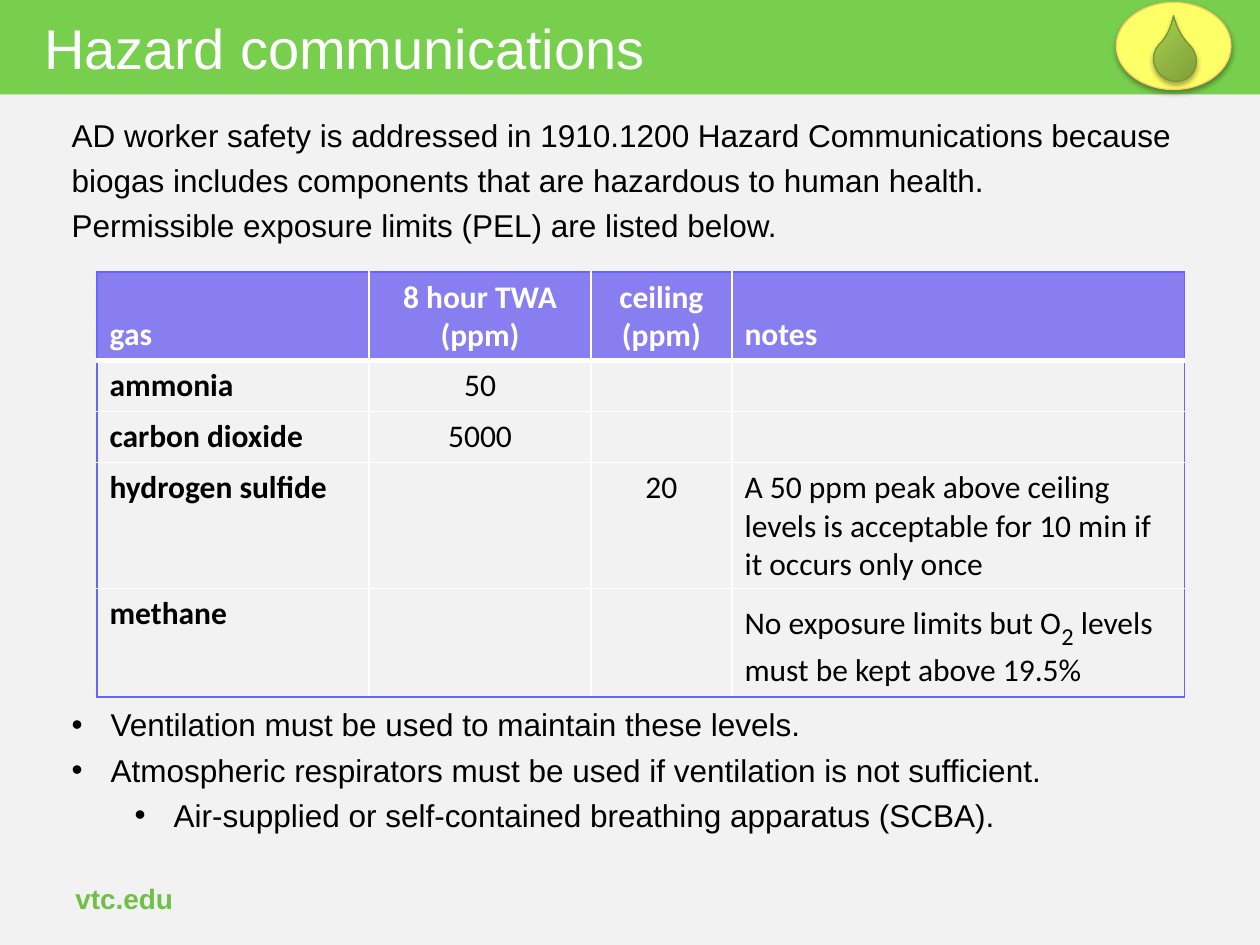
"""Build the hazard communications slide with its table of exposure limits."""
from lxml import etree
from pptx import Presentation
from pptx import util as u
from pptx.dml.color import RGBColor
from pptx.enum import shapes, text
from pptx.oxml import parse_xml
from pptx.oxml.ns import nsdecls, qn

WHITE = RGBColor(0xFF, 0xFF, 0xFF)
BLACK = RGBColor(0, 0, 0)
PAPER = RGBColor(0xF2, 0xF2, 0xF2)
GREEN = RGBColor(0x78, 0xCE, 0x4D)
FOOTER_GREEN = RGBColor(0x70, 0xBF, 0x47)
HEADER_VIOLET = RGBColor(0x88, 0x7E, 0xF0)
EDGE_VIOLET = RGBColor(0x66, 0x66, 0xFF)
YELLOW = RGBColor(0xFF, 0xFF, 0x66)
ORANGE = RGBColor(0xFF, 0xCC, 0x66)
DROP_DARK = RGBColor(0x77, 0x97, 0x37)
DROP_LIGHT = RGBColor(0x9B, 0xC3, 0x48)
DROP_EDGE = RGBColor(0x77, 0x93, 0x3C)

LEFT, CENTER = text.PP_ALIGN.LEFT, text.PP_ALIGN.CENTER
TOP, MIDDLE, BOTTOM = text.MSO_ANCHOR.TOP, text.MSO_ANCHOR.MIDDLE, text.MSO_ANCHOR.BOTTOM

INTRO = [
    ("AD worker safety is addressed in 1910.1200 Hazard Communications because\v"
     "biogas includes components that are hazardous to human health.", None),
    ("Permissible exposure limits (PEL) are listed below.", None),
]
MEASURES = [
    ("Ventilation must be used to maintain these levels.", 0),
    ("Atmospheric respirators must be used if ventilation is not sufficient.", 0),
    ("Air-supplied or self-contained breathing apparatus (SCBA).", 1),
]
LIMITS = [
    ["gas", "8 hour TWA\n(ppm)", "ceiling\n(ppm)", "notes"],
    ["ammonia", "50", "", ""],
    ["carbon dioxide", "5000", "", ""],
    ["hydrogen sulfide", "", "20",
     "A 50 ppm peak above ceiling levels is acceptable for 10 min if it occurs only once"],
    ["methane", "", "", "No exposure limits but O_2_ levels must be kept above 19.5%"],
]


class SlideBuilder:
    """Hold the style and the current slide on a grid of 100 columns by 75 rows."""

    body_font, table_font, body_size = "Arial", "Calibri", 18

    def __init__(self, deck):
        self.column = deck.slide_width / 100
        self.row = deck.slide_height / 75
        self.page = deck.slides.add_slide(deck.slide_layouts[5])
        fill = self.page.background.fill
        fill.solid()
        fill.fore_color.rgb = PAPER

    def place(self, left, top, width, height):
        return (round(left * self.column), round(top * self.row),
                round(width * self.column), round(height * self.row))

    def style(self, para, size, color, name=body_font, bold=False):
        font = para.font
        font.name, font.size, font.bold = name, u.Pt(size), bold
        font.color.rgb = color

    def shape(self, kind, area, fill=None, line=None):
        shape = self.page.shapes.add_shape(kind, *self.place(*area))
        shape.shadow.inherit = False
        if fill is not None:
            shape.fill.solid()
            shape.fill.fore_color.rgb = fill
        if line is None:
            shape.line.fill.background()
        else:
            shape.line.color.rgb = line
            shape.line.width = u.Pt(0.75)
        return shape

    def soft_shadow(self, shape):
        effects = shape._element.spPr.find(qn("a:effectLst"))
        effects.append(parse_xml(
            f'<a:outerShdw {nsdecls("a")} blurRad="{u.Pt(3.1)}" dist="{u.Pt(1.8)}" '
            'dir="5400000" rotWithShape="0"><a:srgbClr val="000000">'
            '<a:alpha val="35000"/></a:srgbClr></a:outerShdw>'))

    def title(self, wording, area):
        title = self.page.shapes.title
        title.left, title.top, title.width, title.height = self.place(*area)
        frame = title.text_frame
        frame.text = wording
        frame.word_wrap = False
        frame.auto_size = text.MSO_AUTO_SIZE.NONE
        frame.vertical_anchor = MIDDLE
        frame.paragraphs[0].alignment = LEFT
        self.style(frame.paragraphs[0], 32, WHITE)
        return title

    def text_box(self, area, anchor=TOP):
        frame = self.page.shapes.add_textbox(*self.place(*area)).text_frame
        frame.word_wrap = True
        frame.vertical_anchor = anchor
        return frame

    def paragraphs(self, area, items):
        frame = self.text_box(area)
        for index, (wording, level) in enumerate(items):
            para = frame.paragraphs[0] if index == 0 else frame.add_paragraph()
            para.text = wording
            para.line_spacing = 1.2
            if level is not None:
                para.level = level
                properties = para._p.get_or_add_pPr()
                properties.set("marL", str(u.Inches(0.31 + 0.5 * level)))
                properties.set("indent", str(u.Inches(-0.31)))
                etree.SubElement(properties, qn("a:buFont"), typeface="Arial")
                etree.SubElement(properties, qn("a:buChar"), char="•")
            self.style(para, self.body_size, BLACK)

    def footer(self, wording, area):
        para = self.text_box(area, MIDDLE).paragraphs[0]
        para.text = wording
        self.style(para, 16, FOOTER_GREEN, bold=True)

    def border(self, cell, side, color, width):
        cell._tc.get_or_add_tcPr().append(parse_xml(
            f'<a:ln{side} {nsdecls("a")} w="{u.Pt(width)}"><a:solidFill>'
            f'<a:srgbClr val="{color}"/></a:solidFill></a:ln{side}>'))

    def cell(self, cell, wording, header, first, centered):
        cell.text_frame.text = wording.replace("_", "")
        cell.vertical_anchor = BOTTOM if header else TOP
        for para in cell.text_frame.paragraphs:
            para.alignment = CENTER if centered else LEFT
            self.style(para, self.body_size, WHITE if header else BLACK,
                       self.table_font, header or first)
        if "_" in wording:
            para = cell.text_frame.paragraphs[0]
            para.text = ""
            for index, part in enumerate(wording.split("_")):
                span = para.add_run()
                span.text = part
                if index % 2:
                    span.font.size = u.Pt(24)
                    span.font._element.set("baseline", "-25000")

    def table(self, area, widths, heights, rows):
        table = self.page.shapes.add_table(len(rows), len(widths), *self.place(*area)).table
        table.first_row = table.horz_banding = False
        for column, width in zip(table.columns, widths):
            column.width = round(width * self.column)
        for row, height in zip(table.rows, heights):
            row.height = round(height * self.row)
        bottom, right = len(rows) - 1, len(widths) - 1
        for r, wordings in enumerate(rows):
            for c, wording in enumerate(wordings):
                cell = table.cell(r, c)
                self.cell(cell, wording, r == 0, c == 0, c in (1, 2))
                outer = {"L": c == 0, "R": c == right, "T": r == 0, "B": r == bottom}
                for side, edge in outer.items():
                    thick = (r, side) in ((0, "B"), (1, "T"))
                    self.border(cell, side, EDGE_VIOLET if edge else WHITE, 3 if thick else 1)
                if r == 0:
                    cell.fill.solid()
                    cell.fill.fore_color.rgb = HEADER_VIOLET
                else:
                    cell.fill.background()

    def drop_badge(self):
        kinds = shapes.MSO_SHAPE
        disc = self.shape(kinds.OVAL, (88.6, 0.2, 9.1, 6.9), YELLOW, ORANGE)
        drop = self.shape(kinds.TEAR, (91.6, 3, 3.3, 3.5), line=DROP_EDGE)
        drop.rotation = 314.8
        drop.adjustments[0] = 1.465
        drop.fill.gradient()
        drop.fill.gradient_angle = 90
        for stop, color, position in zip(drop.fill.gradient_stops,
                                         (DROP_DARK, DROP_LIGHT), (0, 0.8)):
            stop.color.rgb = color
            stop.position = position
        for shape in (disc, drop):
            self.soft_shadow(shape)


def main():
    deck = Presentation()
    deck.slide_width, deck.slide_height = u.Inches(10), u.Inches(7.5)
    slide = SlideBuilder(deck)
    banner = slide.shape(shapes.MSO_SHAPE.RECTANGLE, (0, 0, 100, 7.5), GREEN)
    title = slide.title("Hazard communications", (2.5, 0.5, 52, 6.4))
    title._element.addprevious(banner._element)
    slide.paragraphs((4.7, 8.1, 91, 12), INTRO)
    slide.table((7.7, 21.6, 86.3, 33.8), (21.6, 17.6, 11.2, 35.9),
                (7, 4.05, 4.05, 10, 8.6), LIMITS)
    slide.paragraphs((4.7, 54.9, 91, 12), MEASURES)
    slide.footer("vtc.edu", (5, 69.3, 23.3, 4))
    slide.drop_badge()
    deck.save("out.pptx")


if __name__ == "__main__":
    main()
